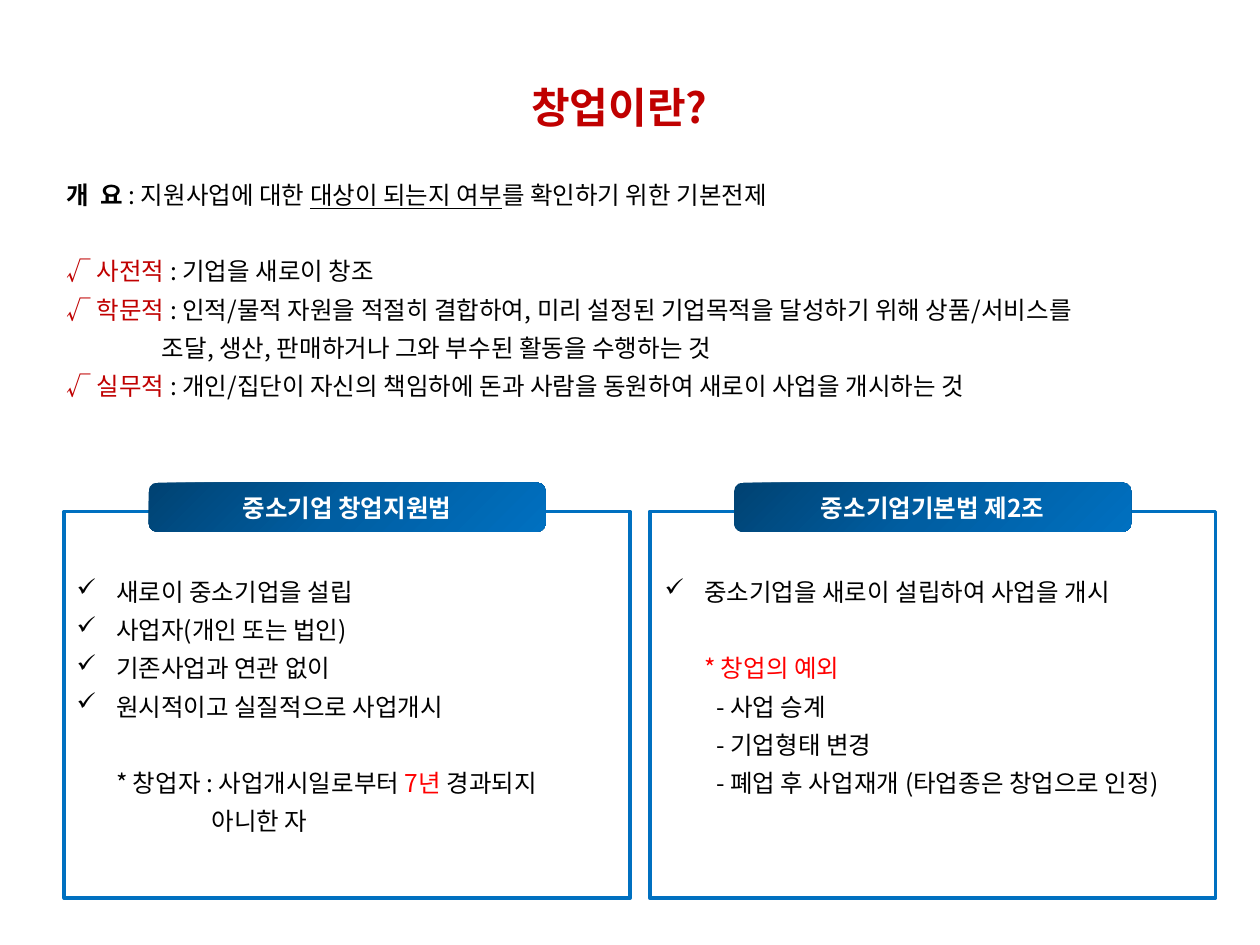
from copy import deepcopy

from lxml.etree import SubElement
from pptx import Presentation
from pptx.dml.color import RGBColor
from pptx.enum.shapes import MSO_SHAPE
from pptx.enum.text import MSO_ANCHOR, MSO_AUTO_SIZE, PP_ALIGN
from pptx.oxml.ns import qn
from pptx.util import Pt

FONT = "Noto Sans CJK KR"
BLACK = RGBColor(0, 0, 0)
WHITE = RGBColor(255, 255, 255)
RED = RGBColor(255, 0, 0)
DARK_RED = RGBColor(192, 0, 0)
BLUE = RGBColor(0, 112, 192)
HEADER_STOPS = [(0, RGBColor(0, 66, 114)), (0.5, RGBColor(0, 94, 162)), (1, BLUE)]

LINE = 21.84
HANG = 22.5
BODY = {"size": Pt(14), "color": BLACK}
BOLD = {"bold": True}
TERM = {"color": DARK_RED}
ALERT = {"color": RED}
CHECK = {"indent": HANG, "bullet": "✓"}
NOTE = {"indent": HANG}
NOTE_AFTER_GAP = {"indent": HANG, "before": LINE}
EXCEPTION = {"indent": 29.5}

TITLE = [("창업이란?", {"size": Pt(24), "bold": True, "color": DARK_RED})]
OVERVIEW = [
    ({}, [("개  요 ", BOLD), (": 지원사업에 대한 ", {}),
          ("대상이 되는지 여부", {"underline": True}),
          ("를 확인하기 위한 기본전제", {})]),
    ({"before": LINE}, [("√ 사전적 ", TERM), (": 기업을 새로이 창조", {})]),
    ({}, [("√ 학문적 ", TERM),
          (": 인적/물적 자원을 적절히 결합하여, 미리 설정된 기업목적을 달성하기 위해 상품/서비스를", {})]),
    ({"indent": 54.4}, [("조달, 생산, 판매하거나 그와 부수된 활동을 수행하는 것", {})]),
    ({}, [("√ 실무적 ", TERM),
          (": 개인/집단이 자신의 책임하에 돈과 사람을 동원하여 새로이 사업을 개시하는 것", {})]),
]
LAWS = [
    ("중소기업 창업지원법", 0, [
        (CHECK, [("새로이 중소기업을 설립", {})]),
        (CHECK, [("사업자(개인 또는 법인)", {})]),
        (CHECK, [("기존사업과 연관 없이", {})]),
        (CHECK, [("원시적이고 실질적으로 사업개시", {})]),
        (NOTE_AFTER_GAP, [("* 창업자 : 사업개시일로부터 ", {}), ("7년 ", ALERT), ("경과되지", {})]),
        ({"indent": 77.2}, [("아니한 자", {})]),
    ]),
    ("중소기업기본법 제2조", 1.4, [
        (CHECK, [("중소기업을 새로이 설립하여 사업을 개시", {})]),
        (NOTE_AFTER_GAP, [("* 창업의 예외", ALERT)]),
        (EXCEPTION, [("- 사업 승계", {})]),
        (EXCEPTION, [("- 기업형태 변경", {})]),
        (EXCEPTION, [("- 폐업 후 사업재개 (타업종은 창업으로 인정)", {})]),
    ]),
]

PANEL_LEFT, PANEL_TOP, PANEL_WIDTH, PANEL_HEIGHT = 36.7, 292.3, 323.3, 221
PANEL_STEP = 334.6
HEADER_WIDTH, HEADER_HEIGHT = 226.8, 28.1
HEADER_TOP = 275.8
LIST_TOP, LIST_HEIGHT = 321.1, 162


def add_runs(paragraph, pieces):
    for words, changes in pieces:
        run = paragraph.add_run()
        run.text = words
        style = BODY | changes
        run.font.color.rgb = style.pop("color")
        run.font.name = FONT
        for key, value in style.items():
            setattr(run.font, key, value)
        SubElement(run.font._element, qn("a:ea")).set("typeface", FONT)


def add_text(slide, box, lines, align):
    frame = slide.shapes.add_textbox(*map(Pt, box)).text_frame
    frame.word_wrap = True
    for number, (layout, pieces) in enumerate(lines):
        paragraph = frame.add_paragraph() if number else frame.paragraphs[0]
        paragraph.alignment = align
        paragraph.line_spacing = Pt(LINE)
        paragraph.space_before = Pt(layout.get("before", 0))
        properties = paragraph._p.get_or_add_pPr()
        properties.set("marL", str(Pt(layout.get("indent", 0))))
        if "bullet" in layout:
            properties.set("indent", str(-Pt(layout["indent"])))
            SubElement(properties, qn("a:buChar")).set("char", layout["bullet"])
        add_runs(paragraph, pieces)


def add_panel(slide, left):
    panel = slide.shapes.add_shape(
        MSO_SHAPE.RECTANGLE, *map(Pt, (left, PANEL_TOP, PANEL_WIDTH, PANEL_HEIGHT)))
    panel.shadow.inherit = False
    panel.fill.solid()
    panel.fill.fore_color.rgb = WHITE
    panel.line.color.rgb = BLUE
    panel.line.width = Pt(2)


def add_header(slide, left, name):
    box = (left + (PANEL_WIDTH - HEADER_WIDTH) / 2, HEADER_TOP, HEADER_WIDTH, HEADER_HEIGHT)
    header = slide.shapes.add_shape(MSO_SHAPE.ROUNDED_RECTANGLE, *map(Pt, box))
    header.shadow.inherit = False
    header.line.fill.background()
    header.fill.gradient()
    header.fill.gradient_angle = 315
    stop_list = header._element.spPr.find(".//" + qn("a:gsLst"))
    stop_list.insert(1, deepcopy(stop_list[0]))
    for stop, (position, color) in zip(header.fill.gradient_stops, HEADER_STOPS):
        stop.position = position
        stop.color.rgb = color
    header.text_frame.vertical_anchor = MSO_ANCHOR.MIDDLE
    paragraph = header.text_frame.paragraphs[0]
    paragraph.alignment = PP_ALIGN.CENTER
    add_runs(paragraph, [(name, BOLD | {"color": WHITE})])


def main():
    deck = Presentation()
    deck.slide_width, deck.slide_height = Pt(720), Pt(540)
    slide = deck.slides.add_slide(deck.slide_layouts[5])

    title = slide.shapes.title
    title.left, title.top, title.width, title.height = map(Pt, (161.3, 43.2, 385.2, 36))
    frame = title.text_frame
    frame.auto_size = MSO_AUTO_SIZE.NONE
    frame.vertical_anchor = MSO_ANCHOR.MIDDLE
    frame.paragraphs[0].alignment = PP_ALIGN.CENTER
    add_runs(frame.paragraphs[0], TITLE)

    add_text(slide, (31, 94.3, 657.4, 139.7), OVERVIEW, PP_ALIGN.JUSTIFY)
    for column, (name, shift, lines) in enumerate(LAWS):
        left = PANEL_LEFT + column * PANEL_STEP
        add_panel(slide, left)
        add_text(slide, (left + shift, LIST_TOP, PANEL_WIDTH, LIST_HEIGHT), lines, PP_ALIGN.LEFT)
        add_header(slide, left, name)

    deck.save("out.pptx")


if __name__ == "__main__":
    main()
